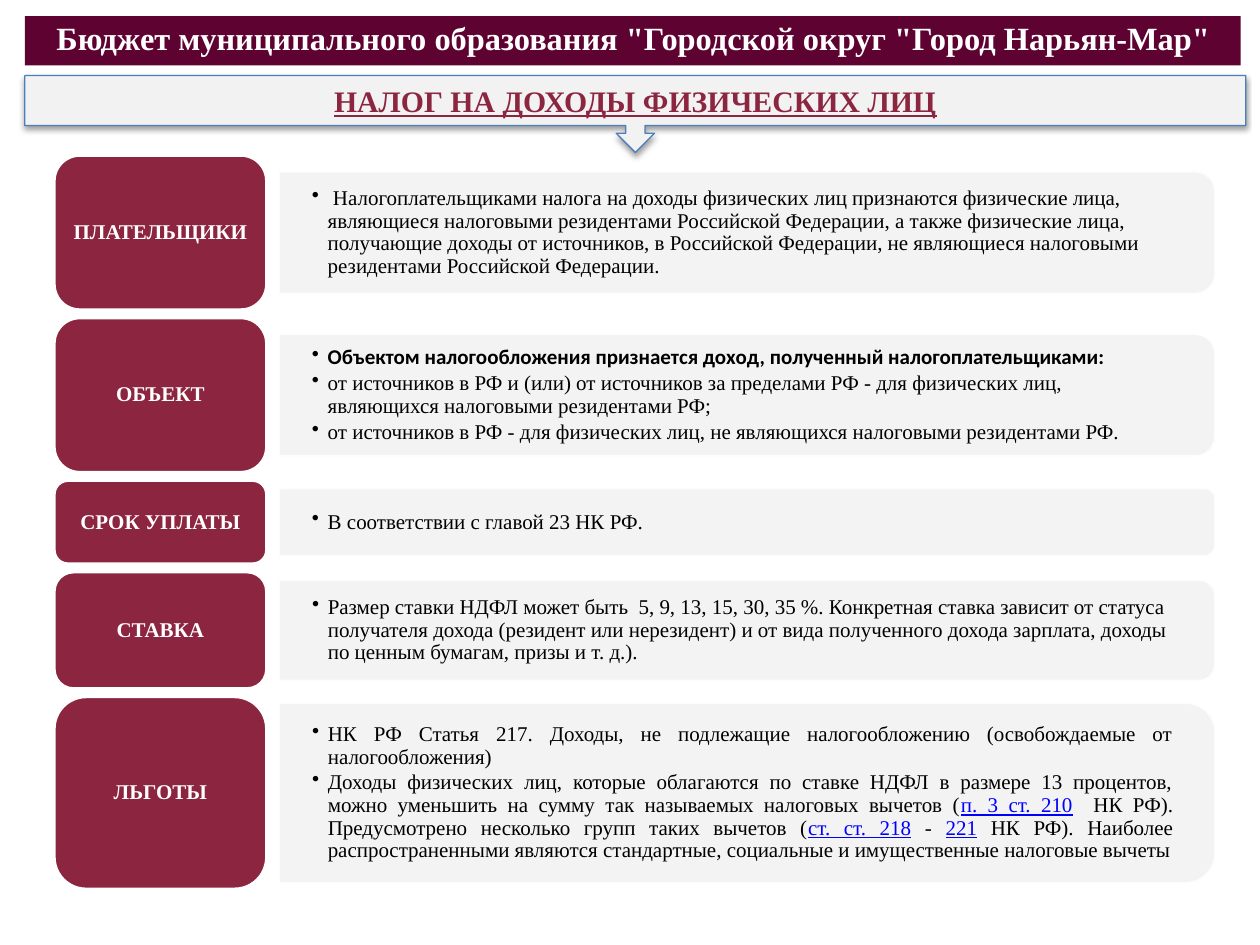
from pptx import Presentation
from pptx.dml.color import RGBColor
from pptx.enum.shapes import MSO_SHAPE
from pptx.enum.text import MSO_ANCHOR, MSO_AUTO_SIZE, PP_ALIGN
from pptx.oxml.ns import qn
from pptx.util import Pt
from lxml.etree import SubElement

SERIF, SANS = "Times New Roman", "Calibri"
WINE, PLUM, PALE = "8C2540", "5E0231", "F2F2F2"
WHITE, BLACK, BLUE, STEEL = "FFFFFF", "000000", "0000FF", "4B7EBC"


def rgb(code):
    return RGBColor.from_string(code)


def fade(color, share):
    """Set the opacity of a solid colour element, in percent."""
    SubElement(color, qn("a:alpha"), val=str(share * 1000))


class Board:
    """Style and current slide."""
    size = 12
    left, wide = 30.8, 121.7
    side, span = 159.1, 535.7

    def __init__(self, slide):
        self.slide = slide

    def font(self, run, color, size=size, bold=False, line=False, name=SERIF):
        font = run.font
        font.name, font.size, font.bold = name, Pt(size), bold
        font.underline = line
        font.color.rgb = rgb(color)

    def shape(self, kind, box, fill, line, width):
        item = self.slide.shapes.add_shape(kind, *map(Pt, box))
        item.shadow.inherit = False
        item.fill.solid()
        item.fill.fore_color.rgb = rgb(fill)
        item.line.color.rgb = rgb(line)
        item.line.width = Pt(width)
        return item

    def caption(self, item, text, color, size=size, line=False):
        """Put one centred bold line into a shape."""
        para = item.text_frame.paragraphs[0]
        para.text = text
        para.alignment = PP_ALIGN.CENTER
        self.font(para.runs[0], color, size, True, line)
        return para

    def title(self, text, box):
        item = self.slide.shapes.title
        item.left, item.top, item.width, item.height = map(Pt, box)
        item.fill.solid()
        item.fill.fore_color.rgb = rgb(PLUM)
        frame = item.text_frame
        frame.auto_size = MSO_AUTO_SIZE.NONE
        frame.vertical_anchor = MSO_ANCHOR.TOP
        self.caption(item, text, WHITE, 18.5).line_spacing = 0.9

    def callout(self, text, box):
        item = self.shape(MSO_SHAPE.DOWN_ARROW_CALLOUT, box, PALE, STEEL, 0.75)
        item.text_frame.vertical_anchor = MSO_ANCHOR.MIDDLE
        self.caption(item, text, WINE, 17, True)
        # Soft shadow below the box
        glow = SubElement(item._element.spPr.find(qn("a:effectLst")), qn("a:outerShdw"),
                          blurRad=str(Pt(3.1)), dist=str(Pt(1.6)),
                          dir="5400000", rotWithShape="0")
        fade(SubElement(glow, qn("a:srgbClr"), val=BLACK), 38)

    def label(self, text, top, high):
        item = self.shape(MSO_SHAPE.ROUNDED_RECTANGLE,
                          (self.left, top, self.wide, high), WINE, WHITE, 2)
        frame = item.text_frame
        frame.word_wrap = True
        frame.vertical_anchor = MSO_ANCHOR.MIDDLE
        frame.margin_left = frame.margin_right = Pt(3.6)
        frame.margin_top = frame.margin_bottom = Pt(2)
        self.caption(item, text, WHITE).line_spacing = 0.9

    def panel(self, mid, high):
        """Draw an upright shape and turn it so the round corners face right."""
        box = (self.side + (self.span - high) / 2, mid - self.span / 2, high, self.span)
        item = self.shape(MSO_SHAPE.ROUND_2_SAME_RECTANGLE, box, PALE, WHITE, 2)
        item.rotation = 90
        for color in item._element.spPr.iter(qn("a:srgbClr")):
            fade(color, 90)

    def points(self, lines, mid, high, align):
        """Make a bullet list; text between bars is shown as a link."""
        trim = high * 0.05
        box = (self.side, mid - high / 2 + trim, self.span - trim, high - 2 * trim)
        frame = self.slide.shapes.add_textbox(*map(Pt, box)).text_frame
        frame.word_wrap = True
        frame.vertical_anchor = MSO_ANCHOR.MIDDLE
        frame.margin_left = frame.margin_right = Pt(19.2)
        frame.margin_top = frame.margin_bottom = Pt(10)
        for spot, line in enumerate(lines):
            para = frame.add_paragraph() if spot else frame.paragraphs[0]
            para.level, para.alignment = 1, align
            para.line_spacing, para.space_after = 0.9, Pt(1.8)
            props = para._p.get_or_add_pPr()
            props.set("marL", str(Pt(9)))
            props.set("indent", str(Pt(-9)))
            SubElement(props, qn("a:buChar"), char="•")
            for part, text in enumerate(line.split("|")):
                run = para.add_run()
                run.text = text
                link = part % 2 == 1
                self.font(run, BLUE if link else BLACK, line=link)
        return frame.paragraphs


# Label, label height, panel height, alignment, list
ROWS = [
    ("ПЛАТЕЛЬЩИКИ", 88.6, 70.6, PP_ALIGN.LEFT, [
        " Налогоплательщиками налога на доходы физических лиц признаются физические лица, "
        "являющиеся налоговыми резидентами Российской Федерации, а также физические лица, "
        "получающие доходы от источников, в Российской Федерации, не являющиеся налоговыми "
        "резидентами Российской Федерации."]),
    ("ОБЪЕКТ", 88.6, 70.6, PP_ALIGN.LEFT, [
        "Объектом налогообложения признается доход, полученный налогоплательщиками:",
        "от источников в РФ и (или) от источников за пределами РФ - для физических лиц, "
        "являющихся налоговыми резидентами РФ;",
        "от источников в РФ - для физических лиц, не являющихся налоговыми резидентами РФ."]),
    ("СРОК УПЛАТЫ", 48, 39.6, PP_ALIGN.LEFT, ["В соответствии с главой 23 НК РФ."]),
    ("СТАВКА", 67, 58.3, PP_ALIGN.LEFT, [
        "Размер ставки НДФЛ может быть  5, 9, 13, 15, 30, 35 %. Конкретная ставка зависит от "
        "статуса получателя дохода (резидент или нерезидент) и от вида полученного дохода "
        "зарплата, доходы по ценным бумагам, призы и т. д.). "]),
    ("ЛЬГОТЫ", 110.2, 103.7, PP_ALIGN.JUSTIFY, [
        "НК РФ Статья 217. Доходы, не подлежащие налогообложению (освобождаемые от "
        "налогообложения)",
        "Доходы физических лиц, которые облагаются по ставке НДФЛ в размере 13 процентов, "
        "можно уменьшить на сумму так называемых налоговых вычетов (|п. 3 ст. 210|  НК РФ). "
        "Предусмотрено несколько групп таких вычетов (|ст. ст. 218| - |221| НК РФ). "
        "Наиболее распространенными являются стандартные, социальные и имущественные "
        "налоговые вычеты"]),
]
GAP = 4.3


def main():
    deck = Presentation()
    deck.slide_width, deck.slide_height = Pt(720), Pt(540)
    board = Board(deck.slides.add_slide(deck.slide_layouts[5]))

    # Heading
    board.title('Бюджет муниципального образования "Городской округ "Город Нарьян-Мар"',
                (14.2, 9.2, 694.8, 28.2))
    board.callout("НАЛОГ НА ДОХОДЫ ФИЗИЧЕСКИХ ЛИЦ", (14.2, 43.2, 697.7, 43.9))

    # Rows of label and list
    top, lists = 88.6, {}
    for name, high, slim, align, lines in ROWS:
        mid = top + high / 2
        board.panel(mid, slim)
        lists[name] = board.points(lines, mid, slim, align)
        board.label(name, top, high)
        top += high + GAP

    # Lead line of the second list
    board.font(lists["ОБЪЕКТ"][0].runs[0], BLACK, bold=True, name=SANS)

    deck.save("out.pptx")


if __name__ == "__main__":
    main()
